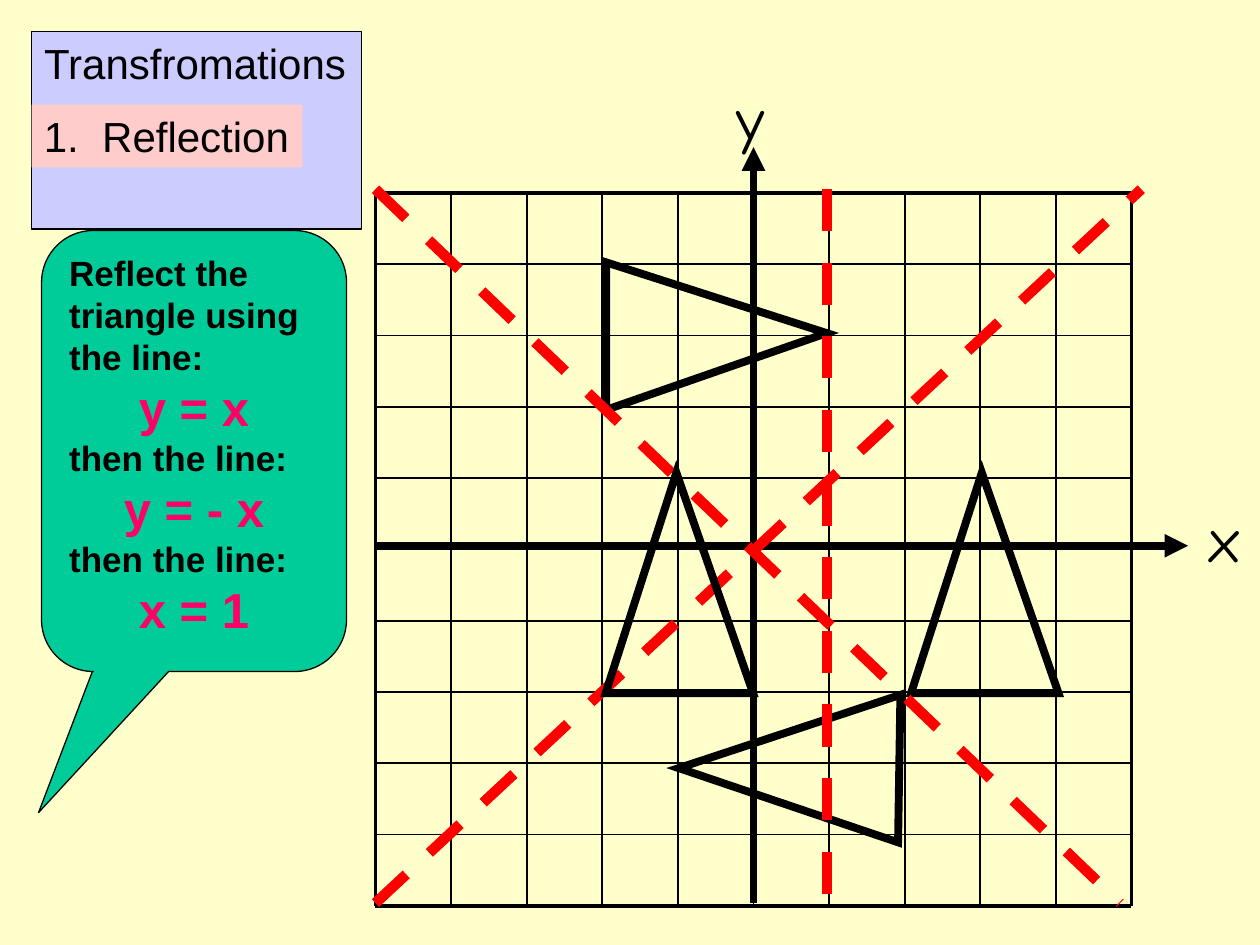
"""Build a slide on reflecting a triangle in the lines y = x, y = -x and x = 1."""
from lxml import etree
from pptx import Presentation, util as u
from pptx.dml import color
from pptx.enum import dml, shapes, text
from pptx.oxml import ns

COLORS = {"page": "FFFFCC", "title": "CCCCFF", "topic": "FFCCCC", "callout": "00CC99",
          "ink": "000000", "mirror": "FF0000", "equation": "FF0066"}
UNIT = 0.25
ORIGIN_X, ORIGIN_Y = 5.98, 4.36
CELL_W, CELL_H = 0.6, 5.66 / 10
HALF = 5


class Board:
    """Hold the style and the slide, and draw on its layout grid or its graph."""

    def __init__(self, slide):
        self.slide = slide
        slide.background.fill.solid()
        slide.background.fill.fore_color.rgb = self.rgb("page")

    def rgb(self, name):
        """Return a named colour."""
        return color.RGBColor.from_string(COLORS[name])

    def place(self, col, row, cols, rows):
        """Turn layout columns and rows into a frame."""
        return [u.Inches(n * UNIT) for n in (col, row, cols, rows)]

    def point(self, x, y):
        """Turn graph coordinates into a slide position."""
        return u.Inches(ORIGIN_X + x * CELL_W), u.Inches(ORIGIN_Y - y * CELL_H)

    def centred(self, x, y, width, height):
        """Return a frame of a size in inches centred on a graph point."""
        left, top = self.point(x, y)
        w, h = u.Inches(width), u.Inches(height)
        return left - w // 2, top - h // 2, w, h

    def stroke(self, line, tint, weight):
        """Set a line's colour and weight."""
        line.color.rgb = self.rgb(tint)
        line.width = u.Pt(weight)

    def fill(self, shape, tint):
        """Fill a shape with one colour."""
        shape.fill.solid()
        shape.fill.fore_color.rgb = self.rgb(tint)

    def add_words(self, paragraph, words, size, font="Arial", tint="ink", bold=False,
                  align=text.PP_ALIGN.LEFT):
        """Add one formatted run to a paragraph."""
        paragraph.alignment = align
        run = paragraph.add_run()
        run.text = words
        run.font.size, run.font.name, run.font.bold = u.Pt(size), font, bold
        run.font.color.rgb = self.rgb(tint)

    def fit(self, shape):
        """Keep the text on one line, from the top, in a box that grows with it."""
        frame = shape.text_frame
        frame.word_wrap = False
        frame.auto_size = text.MSO_AUTO_SIZE.SHAPE_TO_FIT_TEXT
        frame.vertical_anchor = text.MSO_ANCHOR.TOP
        return frame.paragraphs[0]

    def title(self, words, frame):
        """Place and format the title placeholder."""
        heading = self.slide.shapes.title
        heading.left, heading.top, heading.width, heading.height = self.place(*frame)
        self.fill(heading, "title")
        self.stroke(heading.line, "ink", 0.75)
        self.add_words(self.fit(heading), words, 24)

    def topic(self, words, frame):
        """Add the tinted topic box."""
        box = self.slide.shapes.add_textbox(*self.place(*frame))
        self.fill(box, "topic")
        self.add_words(self.fit(box), words, 24)

    def axis_label(self, words, x, y, width):
        """Add an axis name centred on a graph point."""
        box = self.slide.shapes.add_textbox(*self.centred(x, y, width, 0.7))
        self.add_words(self.fit(box), words, 36, "Comic Neue")

    def segment(self, start, end, weight, tint="ink", dashed=False, arrow=False):
        """Draw a straight line between two graph points."""
        link = self.slide.shapes.add_connector(
            shapes.MSO_CONNECTOR.STRAIGHT, *self.point(*start), *self.point(*end))
        self.stroke(link.line, tint, weight)
        properties = link._element.spPr
        if dashed:
            link.line.dash_style = dml.MSO_LINE.DASH
        if arrow:
            etree.SubElement(properties.get_or_add_ln(), ns.qn("a:tailEnd"), type="triangle")
        etree.SubElement(properties, ns.qn("a:effectLst"))

    def mirror(self, start, end):
        """Draw a dashed line of reflection."""
        self.segment(start, end, 6, "mirror", dashed=True)

    def triangle(self, x, y, turn=0):
        """Draw the outlined triangle centred on a graph point."""
        figure = self.slide.shapes.add_shape(
            shapes.MSO_SHAPE.ISOSCELES_TRIANGLE, *self.centred(x, y, 1.17, 1.75))
        figure.adjustments[0] = 0.48
        figure.rotation = turn
        figure.shadow.inherit = False
        figure.fill.background()
        self.stroke(figure.line, "ink", 4.5)
        outline = figure._element.spPr.get_or_add_ln()
        etree.SubElement(outline, ns.qn("a:miter"), lim="800000")

    def callout(self, lines, frame):
        """Add the speech bubble; equations stand out in the centre."""
        bubble = self.slide.shapes.add_shape(
            shapes.MSO_SHAPE.ROUNDED_RECTANGULAR_CALLOUT, *self.place(*frame))
        for index, value in enumerate((-0.51, 0.82, 0.17)):
            bubble.adjustments[index] = value
        bubble.shadow.inherit = False
        self.fill(bubble, "callout")
        self.stroke(bubble.line, "ink", 0.75)
        body = bubble.text_frame
        body.word_wrap = True
        body.vertical_anchor = text.MSO_ANCHOR.TOP
        for index, words in enumerate(lines):
            paragraph = body.add_paragraph() if index else body.paragraphs[0]
            if "=" in words:
                self.add_words(paragraph, words, 28, tint="equation", bold=True,
                               align=text.PP_ALIGN.CENTER)
            else:
                self.add_words(paragraph, words, 20, bold=True)

    def graph(self):
        """Draw the squared grid with its axes and their names."""
        steps = range(-HALF, HALF + 1)
        weights = {n: 2.25 if abs(n) == HALF else 1 for n in steps}
        for y in reversed(steps):
            self.segment((-HALF, y), (HALF, y), weights[y])
        for x in steps:
            self.segment((x, HALF), (x, -HALF), weights[x])
        self.segment((0, -4.96), (0, 5.64), 4.5, arrow=True)
        self.segment((-HALF, 0.05), (5.75, 0.05), 4.5, arrow=True)
        self.axis_label("y", 0, 6.06, 0.46)
        self.axis_label("x", 6.28, 0.16, 0.5)


def main():
    """Build and save the slide."""
    deck = Presentation()
    deck.slide_width, deck.slide_height = u.Inches(10), u.Inches(7.5)
    board = Board(deck.slides.add_slide(deck.slide_layouts.get_by_name("Title Only")))
    board.title("Transfromations", (1, 1, 10.48, 2.04))
    board.topic("1.  Reflection", (1, 3.32, 8.6, 2))
    board.graph()
    board.triangle(3.06, -0.47)
    board.mirror((-5, -4.96), (5.13, 5.05))
    board.triangle(-0.49, 2.99, 90)
    board.mirror((-5, 5.05), (4.85, -4.96))
    board.triangle(0.47, -3.05, 270.9)
    board.callout(["Reflect the", "triangle using", "the line:", "y = x", "then the line:",
                   "y = - x", "then the line:", "x = 1"], (1.32, 7.32, 9.68, 14))
    board.triangle(-0.98, -0.47)
    board.mirror((0.97, 5.05), (0.97, -4.96))
    deck.save("out.pptx")


if __name__ == "__main__":
    main()
